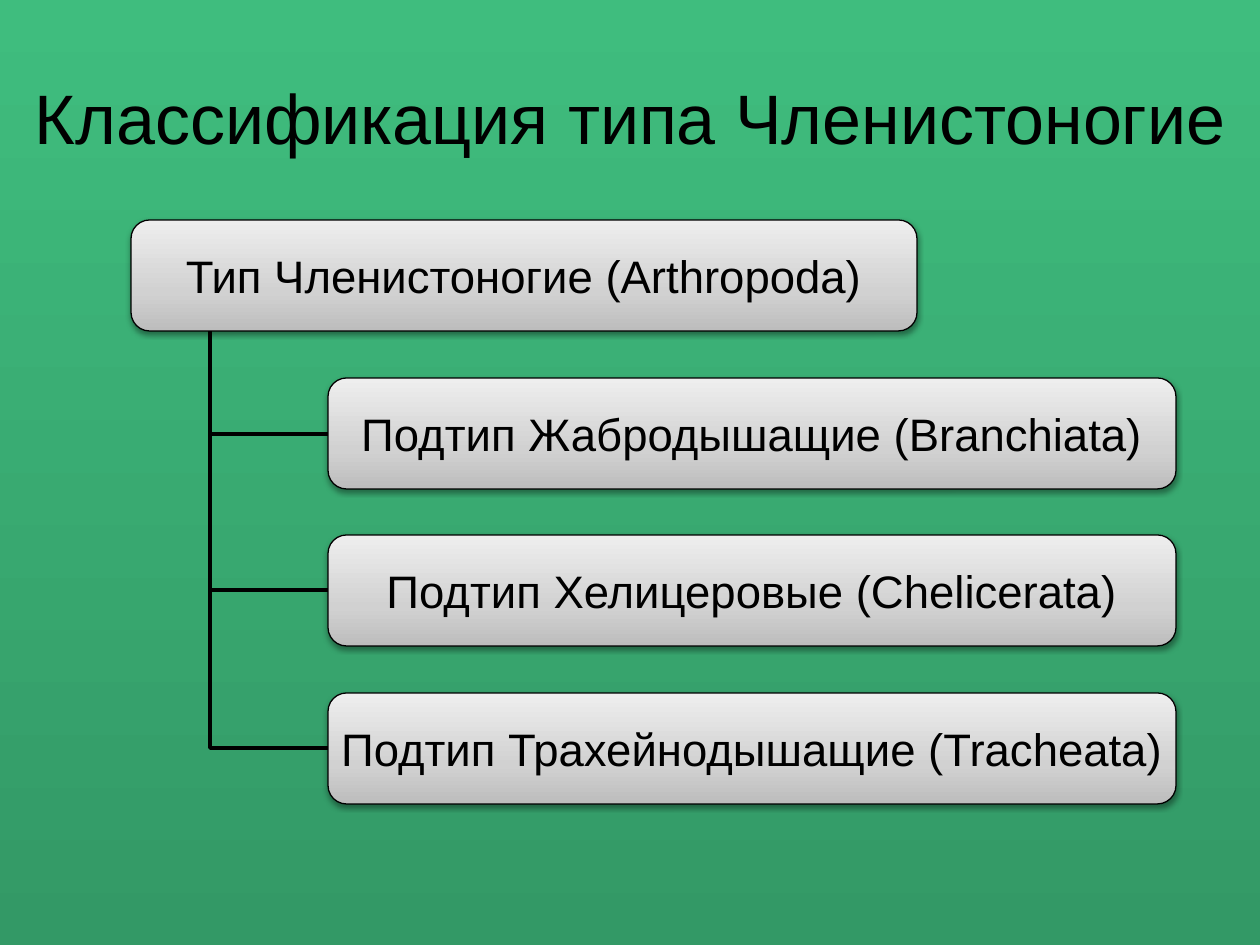
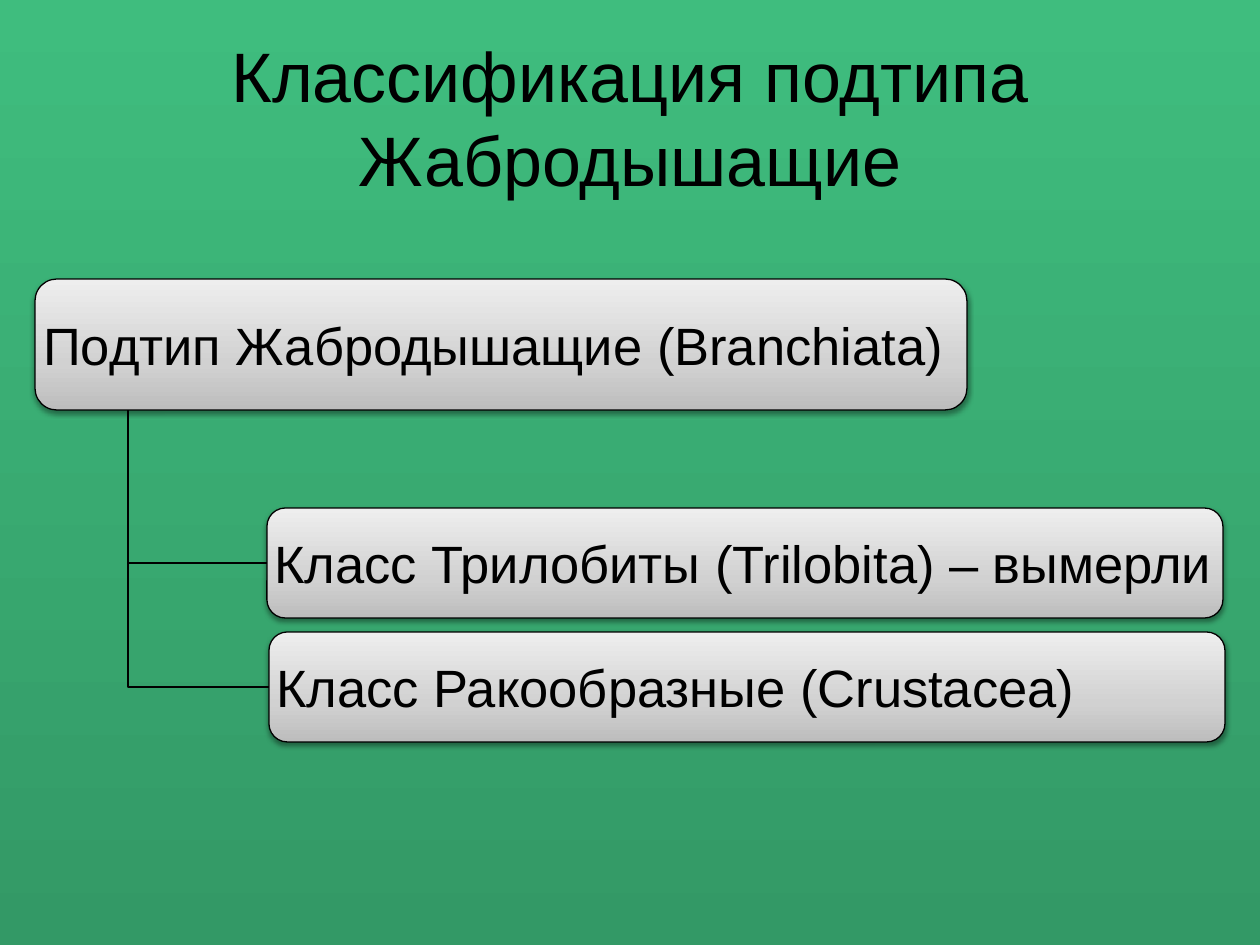
from copy import deepcopy

from lxml.etree import SubElement
from pptx import Presentation
from pptx.dml.color import RGBColor
from pptx.enum.shapes import MSO_SHAPE as SHAPE
from pptx.enum.text import MSO_ANCHOR as ANCHOR, MSO_AUTO_SIZE as AUTO_SIZE, PP_ALIGN as ALIGN
from pptx.oxml.ns import qn
from pptx.util import Pt

SCALE = 914400 / 126
BLACK = RGBColor(0x00, 0x00, 0x00)
GREEN_TOP = RGBColor(0x3F, 0xBD, 0x7E)
GREEN_BOTTOM = RGBColor(0x33, 0x99, 0x66)
GREY_DARK = RGBColor(0xBD, 0xBD, 0xBD)
GREY_MID = RGBColor(0xD1, 0xD1, 0xD1)
GREY_LIGHT = RGBColor(0xEE, 0xEE, 0xEE)


def px(n):
    return round(n * SCALE)


def set_all(obj, values):
    for name, value in values.items():
        setattr(obj, name, value)


def set_gradient(owner, fill, stops, angle):
    fill.gradient()
    fill.gradient_angle = angle
    gs_list = owner.find(".//" + qn("a:gsLst"))
    while len(gs_list) < len(stops):
        gs_list.append(deepcopy(gs_list[0]))
    for stop, (position, color) in zip(fill.gradient_stops, stops):
        stop.position = position
        stop.color.rgb = color


class Deck:
    font = {"name": "Arial"}
    title_frame = {"word_wrap": True, "auto_size": AUTO_SIZE.NONE, "vertical_anchor": ANCHOR.MIDDLE}
    box_frame = {
        "word_wrap": True,
        "vertical_anchor": ANCHOR.MIDDLE,
        **{f"margin_{side}": px(2) for side in ("left", "top", "right", "bottom")},
    }
    box_stops = [(0, GREY_DARK), (0.35, GREY_MID), (1, GREY_LIGHT)]
    shadow = {"blurRad": Pt(3.1), "dist": Pt(1.6), "dir": 5400000, "rotWithShape": 0}

    def __init__(self):
        self.prs = Presentation()
        set_all(self.prs, {"slide_width": px(1260), "slide_height": px(945)})
        master = self.prs.slide_master
        set_gradient(master.element, master.background.fill,
                     [(0, GREEN_TOP), (1, GREEN_BOTTOM)], 270)
        self.s = None

    def put_text(self, tf, text, size, align, frame):
        set_all(tf, frame)
        tf.text = text
        p = tf.paragraphs[0]
        p.alignment = align
        set_all(p.runs[0].font, {**self.font, "size": Pt(size)})
        p.runs[0].font.color.rgb = BLACK

    def outline(self, sp, width):
        sp.line.color.rgb = BLACK
        sp.line.width = Pt(width)

    def slide(self, title, left, width):
        self.s = self.prs.slides.add_slide(self.prs.slide_layouts[5])
        sp = self.s.shapes.title
        set_all(sp, {"left": px(left), "top": px(38), "width": px(width), "height": px(157)})
        self.put_text(sp.text_frame, title, 40, ALIGN.CENTER, self.title_frame)

    def box(self, text, rect, size, align):
        sp = self.s.shapes.add_shape(SHAPE.ROUNDED_RECTANGLE, *map(px, rect))
        set_gradient(sp.element, sp.fill, self.box_stops, 90)
        self.outline(sp, 0.75)
        sp.shadow.inherit = False
        effects = sp.element.spPr.find(qn("a:effectLst"))
        shadow = SubElement(effects, qn("a:outerShdw"),
                            {name: str(int(value)) for name, value in self.shadow.items()})
        color = SubElement(shadow, qn("a:srgbClr"), val=str(BLACK))
        SubElement(color, qn("a:alpha"), val="38000")
        self.put_text(sp.text_frame, text, size, align, self.box_frame)

    def branch(self, root, child, width):
        left, top, root_width, height = root
        trunk = left + round(root_width / 10)
        middle = child[1] + child[3] / 2
        elbow = self.s.shapes.build_freeform(trunk, top + height, scale=SCALE)
        elbow.add_line_segments([(trunk, middle), (child[0], middle)], close=False)
        sp = elbow.convert_to_shape()
        sp.fill.background()
        sp.shadow.inherit = False
        self.outline(sp, width)

    def tree(self, root, children, size, align, line_width):
        for _, rect in reversed(children):
            self.branch(root[1], rect, line_width)
        for text, rect in [root, *children]:
            self.box(text, rect, size, align)


def main():
    deck = Deck()

    deck.slide("Классификация типа Членистоногие", 0, 1260)
    subphyla = ["Подтип Жабродышащие (Branchiata)",
                "Подтип Хелицеровые (Chelicerata)",
                "Подтип Трахейнодышащие (Tracheata)"]
    deck.tree(("Тип Членистоногие (Arthropoda)", (131, 220, 786, 111)),
              [(text, (328, 378 + 315 * i // 2, 848, 111)) for i, text in enumerate(subphyla)],
              26, ALIGN.CENTER, 2)

    deck.slide("Классификация подтипа Жабродышащие", 63, 1134)
    classes = ["Класс Трилобиты (Trilobita) – вымерли",
               "Класс Ракообразные (Crustacea)"]
    deck.tree((subphyla[0], (35, 279, 932, 131)),
              [(text, (267 + 2 * i, 508 + 124 * i, 956, 110)) for i, text in enumerate(classes)],
              30, ALIGN.LEFT, 0.75)

    deck.prs.save("out.pptx")


if __name__ == "__main__":
    main()
